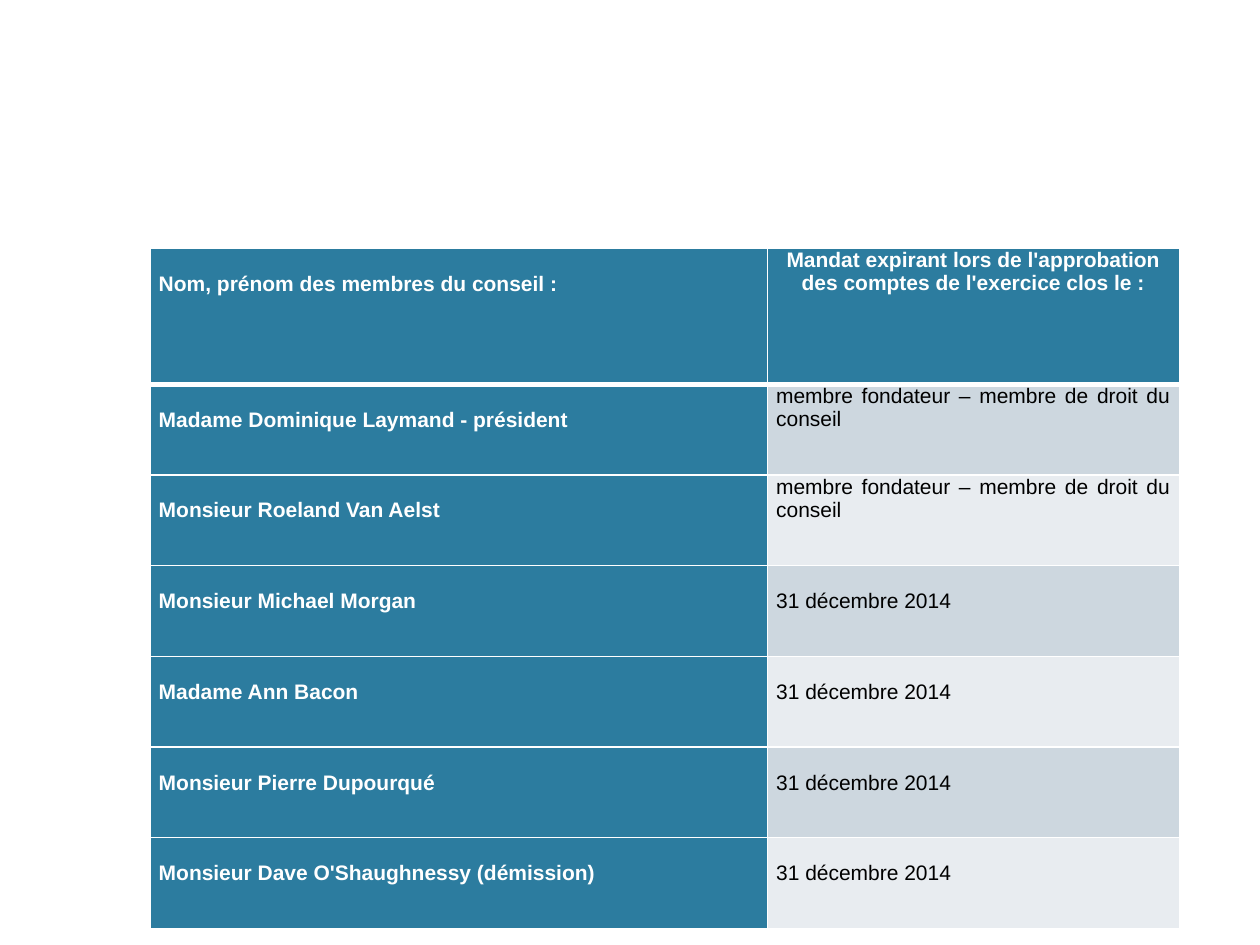
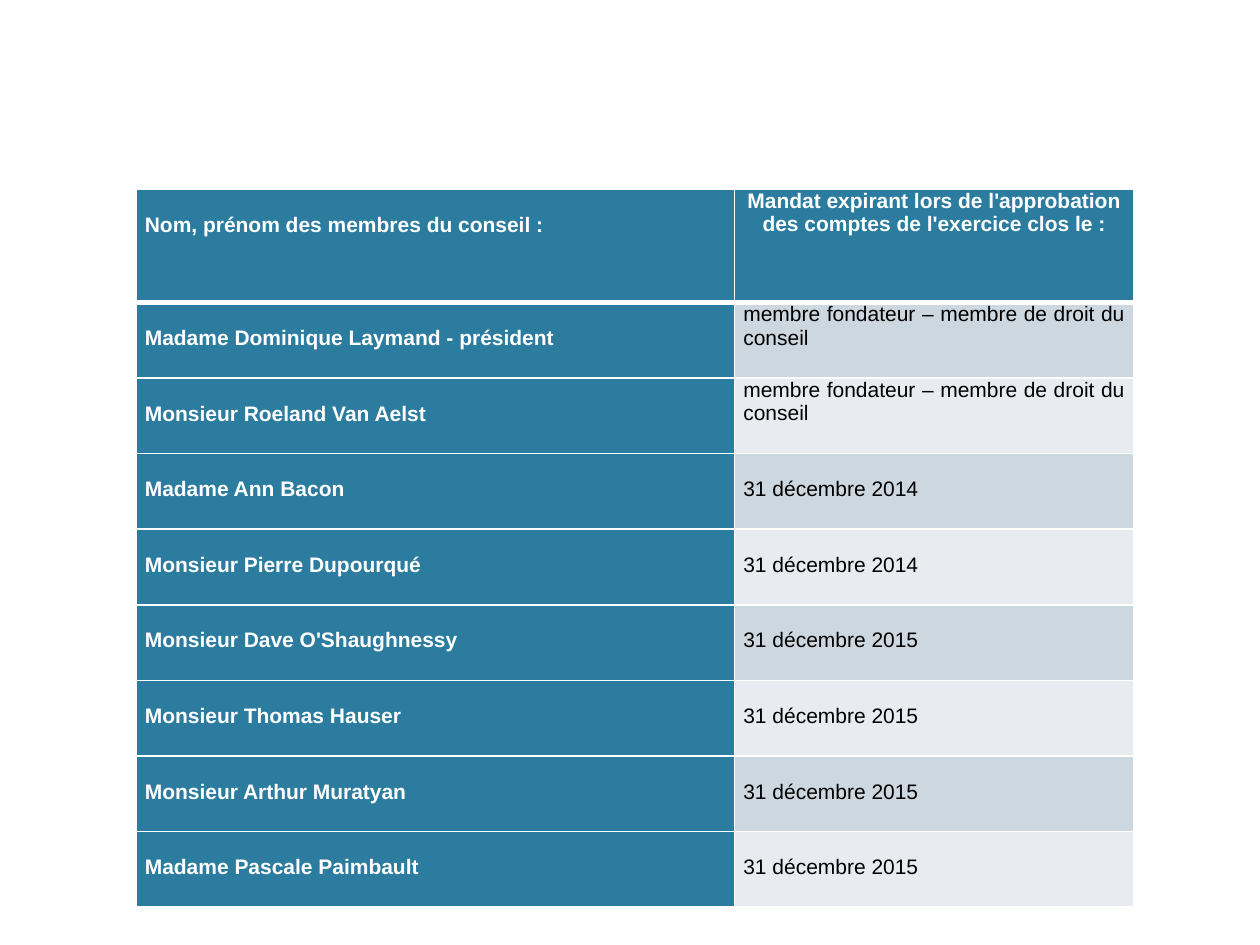
from lxml import etree
from pptx import Presentation
from pptx.dml.color import RGBColor
from pptx.enum.text import PP_ALIGN as Align
from pptx.oxml.ns import qn
from pptx.util import Inches, Pt

WHITE = RGBColor(0xFF, 0xFF, 0xFF)
BLACK = RGBColor(0, 0, 0)
TEAL = RGBColor(0x2C, 0x7C, 0x9F)
BANDS = RGBColor(0xCD, 0xD7, 0xDF), RGBColor(0xE8, 0xEC, 0xF0)

FONT, SIZE = "Arial", Pt(12)
SIDE = Inches(0.07)
LINE = Inches(0.19)  # height of one text line

HEADS = (
    "Nom, prénom des membres du conseil :",
    "Mandat expirant lors de l'approbation des comptes de l'exercice clos le :",
)
RIGHT = "membre fondateur – membre de droit du conseil"
END_14 = "31 décembre 2014"
END_15 = "31 décembre 2015"
FOUNDERS = [
    ("Madame Dominique Laymand - président", RIGHT),
    ("Monsieur Roeland Van Aelst", RIGHT),
]
BEFORE = FOUNDERS + [
    ("Monsieur Michael Morgan", END_14),
    ("Madame Ann Bacon", END_14),
    ("Monsieur Pierre Dupourqué", END_14),
    ("Monsieur Dave O'Shaughnessy (démission)", END_14),
]
AFTER = FOUNDERS + [
    ("Madame Ann Bacon", END_14),
    ("Monsieur Pierre Dupourqué", END_14),
    ("Monsieur Dave O'Shaughnessy", END_15),
    ("Monsieur Thomas Hauser", END_15),
    ("Monsieur Arthur Muratyan", END_15),
    ("Madame Pascale Paimbault", END_15),
]


class Deck:
    def __init__(self):
        self.prs = Presentation()
        self.prs.slide_width, self.prs.slide_height = Inches(10), Inches(7.5)
        self.slide = None

    def page(self):
        self.slide = self.prs.slides.add_slide(self.prs.slide_layouts[6])

    def edge(self, cell, top, base):
        """Draw white borders, 1 pt at the sides; they must precede the fill."""
        props = cell._tc.get_or_add_tcPr()
        widths = {"a:lnL": 1, "a:lnR": 1, "a:lnT": top, "a:lnB": base}
        for spot, (tag, width) in enumerate(widths.items()):
            line = etree.Element(qn(tag), w=str(Pt(width)))
            fill = etree.SubElement(line, qn("a:solidFill"))
            etree.SubElement(fill, qn("a:srgbClr"), val=str(WHITE))
            props.insert(spot, line)

    def cell(self, cell, text, fill, color, bold, align, drop):
        """Fill a cell; drop starts its text one line lower."""
        cell.fill.solid()
        cell.fill.fore_color.rgb = fill
        cell.margin_left = cell.margin_right = SIDE
        cell.margin_top = LINE if drop else 0
        cell.margin_bottom = 0
        cell.text = text
        para = cell.text_frame.paragraphs[0]
        para.alignment = align
        para.space_after = Pt(12)
        font = para.font
        font.name, font.size, font.bold = FONT, SIZE, bold
        font.color.rgb = color

    def table(self, left, top, cols, head, step, members):
        """Add a header of height head and one row of height step per member."""
        rows = [HEADS] + members
        frame = self.slide.shapes.add_table(
            len(rows), len(cols), Inches(left), Inches(top),
            Inches(sum(cols)), Inches(head + step * len(members)))
        table = frame.table
        table.first_row = table.horz_banding = False
        for col, width in zip(table.columns, cols):
            col.width = Inches(width)
        for r, row in enumerate(rows):
            table.rows[r].height = Inches(step if r else head)
            for c, text in enumerate(row):
                cell = table.cell(r, c)
                strong = r == 0 or c == 0
                self.cell(
                    cell, text,
                    fill=TEAL if strong else BANDS[(r - 1) % 2],
                    color=WHITE if strong else BLACK,
                    bold=strong,
                    align=Align.CENTER if r == 0 and c else Align.JUSTIFY,
                    drop=text not in (HEADS[1], RIGHT))
                self.edge(cell, 3 if r == 1 else 1, 3 if r == 0 else 1)


def main():
    deck = Deck()
    deck.page()
    deck.table(1.19, 1.97, (4.9, 3.27), 1.08, 0.72, BEFORE)
    deck.page()
    deck.table(1.08, 1.5, (4.75, 3.17), 0.9, 0.6, AFTER)
    deck.prs.save("out.pptx")


if __name__ == "__main__":
    main()
